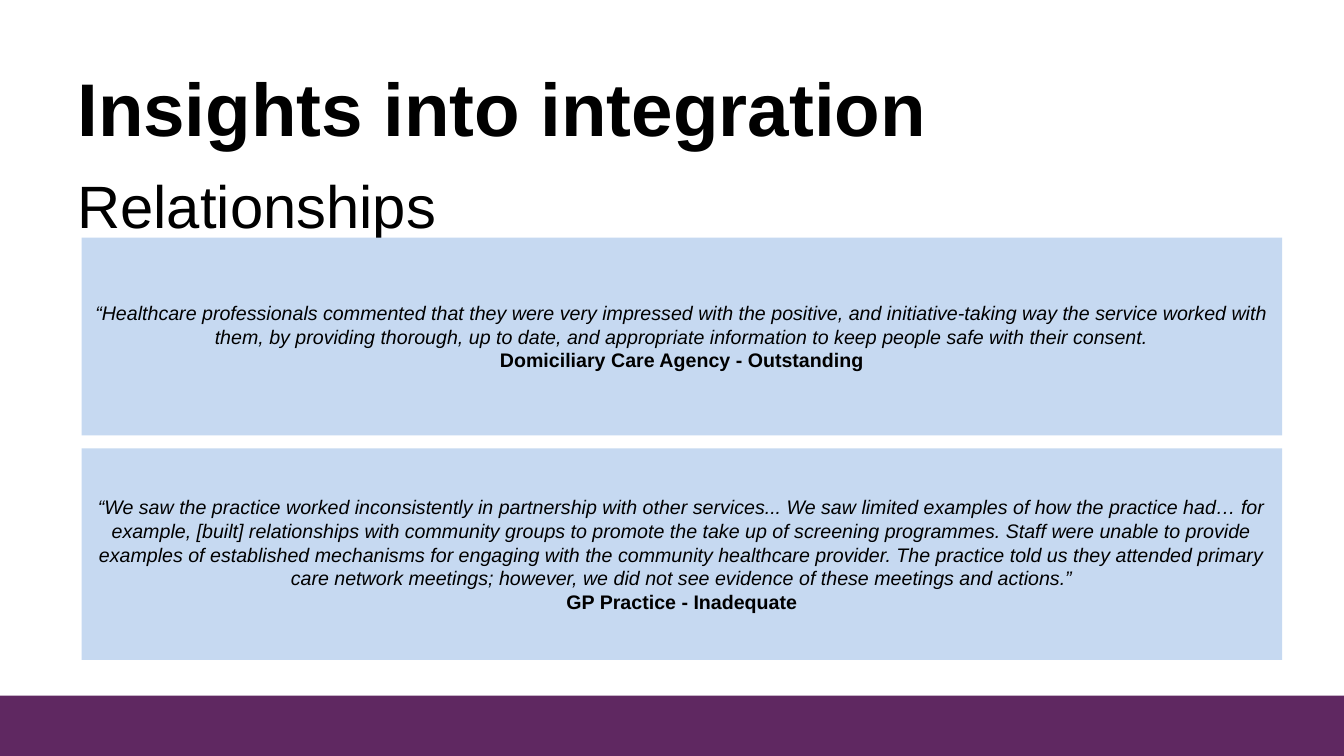
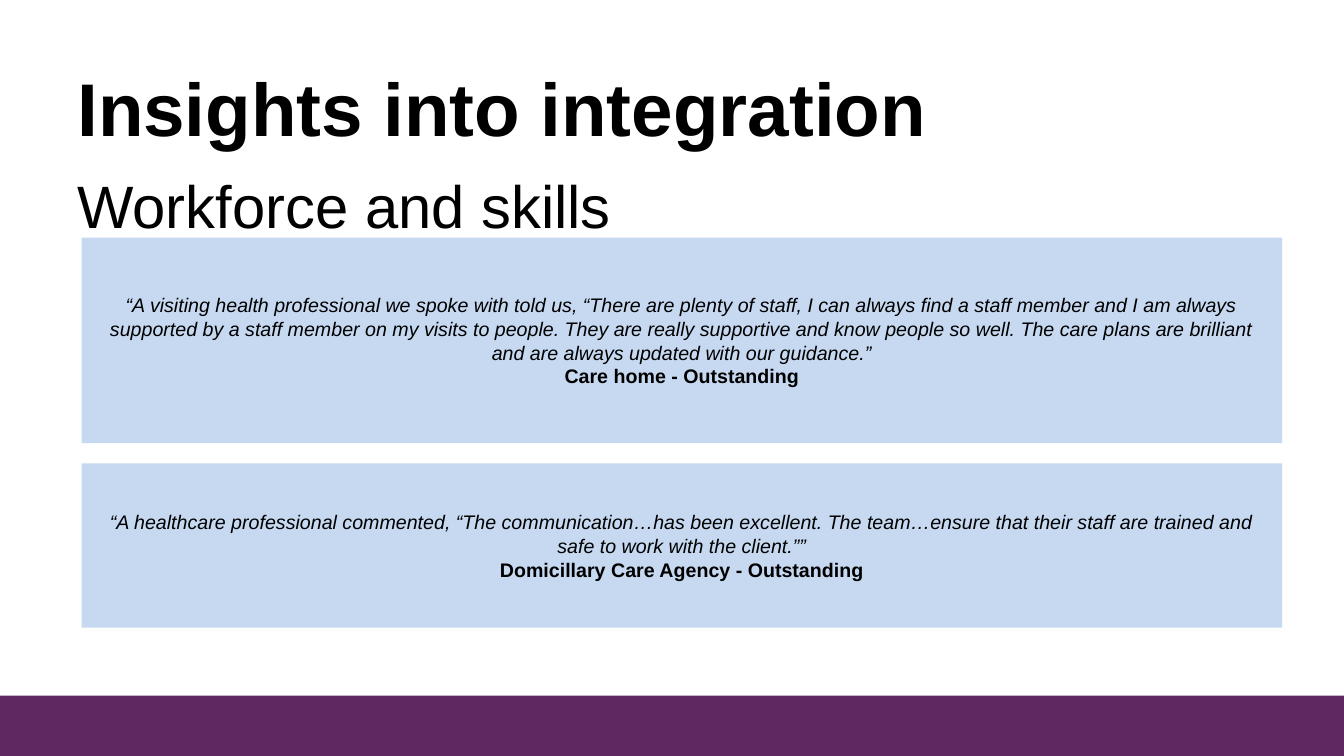
from pptx import Presentation
from pptx.dml.color import RGBColor
from pptx.enum.shapes import MSO_SHAPE
from pptx.enum.text import MSO_ANCHOR, PP_ALIGN
from pptx.util import Cm, Pt

FONT = "Arial"
BLACK, PURPLE, PALE_BLUE = "000000", "5F2861", "C6D9F1"
PAGE_WIDTH, PAGE_HEIGHT = 33.87, 19.05
BAND_TOP = 17.53
TITLE = "Insights into integration"
TITLE_BOX = (1.7, 1.3, 30.48, 2.6)
SUBTITLE_BOX = (1.7, 4, 30.48, 1.95)
QUOTE_LEFT, QUOTE_TOP, QUOTE_WIDTH = 2.06, 5.99, 30.25

# Each page: subtitle, gap between quotes, then (height, quote, source) per quote
PAGES = [
    ("Relationships", 0.33, [
        (4.98,
         "“Healthcare professionals commented that they were very impressed with the "
         "positive, and initiative-taking way the service worked with them, by providing "
         "thorough, up to date, and appropriate information to keep people safe with "
         "their consent.",
         "Domiciliary Care Agency - Outstanding"),
        (5.33,
         "“We saw the practice worked inconsistently in partnership with other "
         "services... We saw limited examples of how the practice had… for example, "
         "[built] relationships with community groups to promote the take up of "
         "screening programmes. Staff were unable to provide examples of established "
         "mechanisms for engaging with the community healthcare provider. The practice "
         "told us they attended primary care network meetings; however, we did not see "
         "evidence of these meetings and actions.”",
         "GP Practice - Inadequate"),
    ]),
    ("Workforce and skills", 0.51, [
        (5.18,
         "“A visiting health professional we spoke with told us, “There are plenty of "
         "staff, I can always find a staff member and I am always supported by a staff "
         "member on my visits to people. They are really supportive and know people so "
         "well. The care plans are brilliant and are always updated with our guidance.”",
         "Care home - Outstanding"),
        (4.14,
         "“A healthcare professional commented, “The communication…has been excellent. "
         "The team…ensure that their staff are trained and safe to work with the "
         "client.””",
         "Domicillary Care Agency - Outstanding"),
    ]),
]


def rgb(code):
    return RGBColor.from_string(code)


def write(para, text, size, bold=False, italic=False, align=PP_ALIGN.LEFT):
    para.alignment = align
    span = para.add_run()
    span.text = text
    font = span.font
    font.name, font.size = FONT, Pt(size)
    font.bold, font.italic = bold, italic
    font.color.rgb = rgb(BLACK)


def add_rectangle(page, bounds, colour):
    box = page.shapes.add_shape(MSO_SHAPE.RECTANGLE, *map(Cm, bounds))
    box.shadow.inherit = False
    box.fill.solid()
    box.fill.fore_color.rgb = rgb(colour)
    box.line.fill.background()
    return box


def add_heading(page, bounds, text, size, bold=False):
    frame = page.shapes.add_textbox(*map(Cm, bounds)).text_frame
    frame.word_wrap = True
    frame.margin_left = frame.margin_right = Cm(0.25)
    frame.margin_top = frame.margin_bottom = Cm(0.25)
    write(frame.paragraphs[0], text, size, bold=bold)


def add_quote(page, bounds, quote, source):
    frame = add_rectangle(page, bounds, PALE_BLUE).text_frame
    frame.word_wrap = True
    frame.vertical_anchor = MSO_ANCHOR.MIDDLE
    write(frame.paragraphs[0], quote, 14, italic=True, align=PP_ALIGN.CENTER)
    write(frame.add_paragraph(), source, 14, bold=True, align=PP_ALIGN.CENTER)


def add_quote_page(deck, subtitle, gap, quotes):
    page = deck.slides.add_slide(deck.slide_layouts[6])
    add_rectangle(page, (0, BAND_TOP, PAGE_WIDTH, PAGE_HEIGHT - BAND_TOP), PURPLE)
    add_heading(page, TITLE_BOX, TITLE, 53.3, bold=True)
    add_heading(page, SUBTITLE_BOX, subtitle, 42.7)
    top = QUOTE_TOP
    for height, quote, source in quotes:
        add_quote(page, (QUOTE_LEFT, top, QUOTE_WIDTH, height), quote, source)
        top += height + gap


def main():
    deck = Presentation()
    deck.slide_width, deck.slide_height = Cm(PAGE_WIDTH), Cm(PAGE_HEIGHT)
    for subtitle, gap, quotes in PAGES:
        add_quote_page(deck, subtitle, gap, quotes)
    deck.save("out.pptx")


if __name__ == "__main__":
    main()
